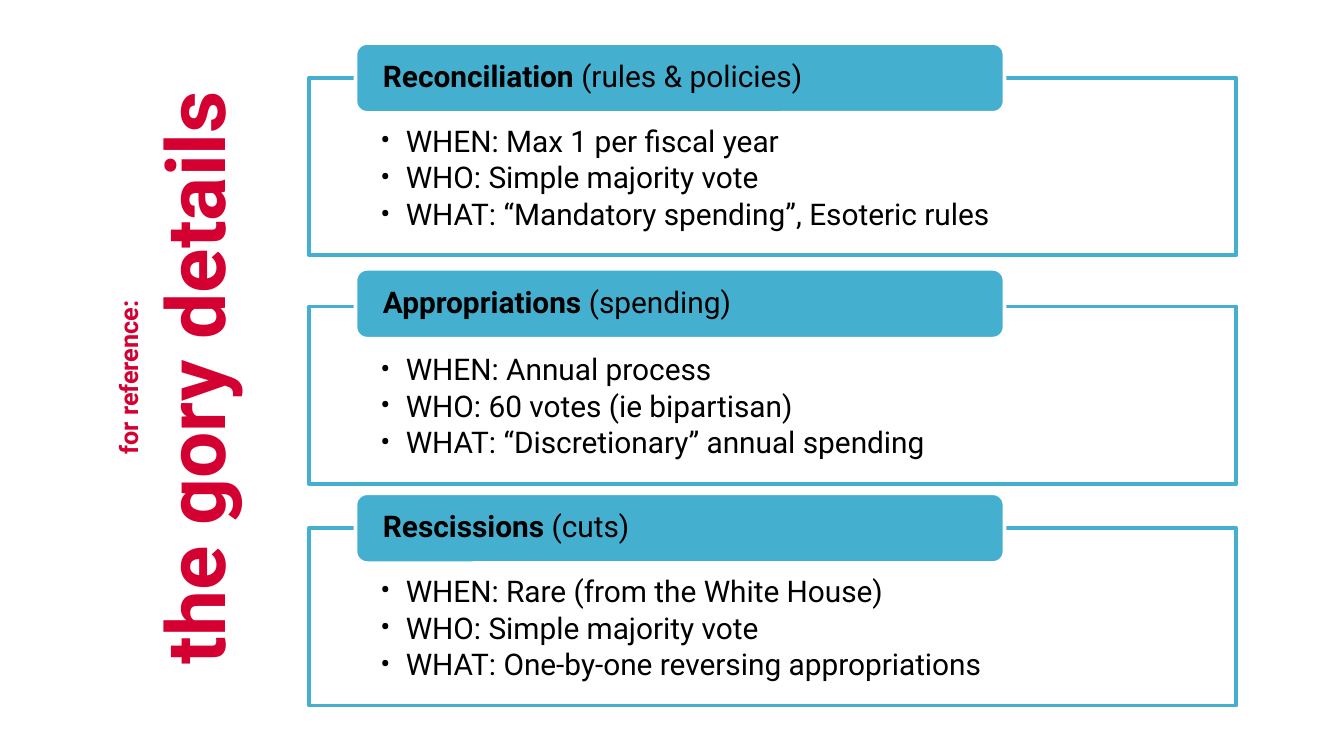
from copy import deepcopy
from lxml.etree import SubElement
from pptx import Presentation
from pptx.dml.color import RGBColor
from pptx.enum.shapes import MSO_SHAPE
from pptx.enum.text import MSO_ANCHOR, PP_ALIGN
from pptx.oxml.ns import qn
from pptx.util import Emu, Inches, Pt

WIDE = 10
HIGH = WIDE * 9 / 16
BLUE, RED, WHITE, BLACK = "45AFD0", "D50032", "FFFFFF", "000000"
TOPS = (0.32, 2, 3.67)
DROPS = (0.26, 0.28, 0.26)
CARDS = (
    ("Reconciliation ", "(rules & policies)", (
        "WHEN: Max 1 per fiscal year",
        "WHO: Simple majority vote",
        "WHAT: “Mandatory spending”, Esoteric rules")),
    ("Appropriations ", "(spending)", (
        "WHEN: Annual process",
        "WHO: 60 votes (ie bipartisan)",
        "WHAT: “Discretionary” annual spending")),
    ("Rescissions ", "(cuts)", (
        "WHEN: Rare (from the White House)",
        "WHO: Simple majority vote",
        "WHAT: One-by-one reversing appropriations")),
)


def paint(fill, color):
    """Give a fill one solid colour."""
    fill.solid()
    fill.fore_color.rgb = RGBColor.from_string(color)


def dot(para):
    """Turn a paragraph into a hanging bullet."""
    para.level = 1
    props = para._p.get_or_add_pPr()
    props.set("marL", str(Inches(0.19)))
    props.set("indent", str(Inches(-0.19)))
    SubElement(props, qn("a:buFont"), typeface="Roboto")
    SubElement(props, qn("a:buChar"), char="•")


def split(para, run):
    """Add a line break in the format of the run before it."""
    para.add_line_break()
    para._p.findall(qn("a:br"))[-1].append(deepcopy(run._r.rPr))


def write(frame, lines, color=BLACK, align=PP_ALIGN.LEFT, anchor=MSO_ANCHOR.TOP,
          inset=(0.1, 0.05, 0.1, 0.05), lead=1, after=0, bullet=False):
    """Fill a frame with lines of (text, size, bold) runs; a final newline breaks."""
    frame.word_wrap = True
    frame.vertical_anchor = anchor
    (frame.margin_left, frame.margin_top,
     frame.margin_right, frame.margin_bottom) = map(Inches, inset)
    for index, line in enumerate(lines):
        para = frame.add_paragraph() if index else frame.paragraphs[0]
        para.alignment = align
        para.line_spacing = lead
        para.space_after = Pt(after)
        if bullet:
            dot(para)
        for text, size, bold in line:
            run = para.add_run()
            run.text = text.rstrip("\n")
            run.font.name = "Roboto"
            run.font.size = Pt(size)
            run.font.bold = bold
            paint(run.font.fill, color)
            if text.endswith("\n"):
                split(para, run)


def block(slide, kind, box, fill, line):
    """Add a flat shape with a two-point outline."""
    shape = slide.shapes.add_shape(kind, *map(Inches, box))
    shape.shadow.inherit = False
    paint(shape.fill, fill)
    paint(shape.line.fill, line)
    shape.line.width = Pt(2)
    return shape


def card(slide, box, drop, name, note, facts):
    """Place a bulleted frame and the header that overlaps its top."""
    left, top, width, height = box
    body = block(slide, MSO_SHAPE.RECTANGLE,
                 (left, top + drop, width, height - drop), WHITE, BLUE)
    write(body.text_frame, [[(fact, 16, False)] for fact in facts],
          inset=(0.53, 0.36, 0.54, 0.12), lead=0.9, after=2.4, bullet=True)
    head = block(slide, MSO_SHAPE.ROUNDED_RECTANGLE,
                 (left + width * 0.05, top, width * 0.7, 0.52), BLUE, WHITE)
    write(head.text_frame, [[(name, 16, True), (note, 16, False)]],
          anchor=MSO_ANCHOR.MIDDLE, inset=(0.18, 0, 0.18, 0), lead=0.9)


def banner(slide, box):
    """Place the title so that it reads upwards inside a tall box."""
    left, top, width, height = map(Inches, box)
    title = slide.shapes.title
    title.left = Emu(left + (width - height) // 2)
    title.top = Emu(top + (height - width) // 2)
    title.width, title.height = height, width
    title.rotation = 270
    write(title.text_frame,
          [[("for reference:\n", 13.5, True), ("the gory details", 44, True)]],
          color=RED, align=PP_ALIGN.CENTER)


def main():
    """Build and save the slide."""
    deck = Presentation()
    deck.slide_width, deck.slide_height = Inches(WIDE), Inches(HIGH)
    slide = deck.slides.add_slide(deck.slide_layouts[5])
    paint(slide.background.fill, WHITE)
    for top, drop, (name, note, facts) in zip(TOPS, DROPS, CARDS):
        box = (WIDE * 0.23, top, WIDE * 0.69, drop + 1.32)
        card(slide, box, drop, name, note, facts)
    banner(slide, (0.79, -0.18, 1.07, 5.98))
    deck.save("out.pptx")


if __name__ == "__main__":
    main()
